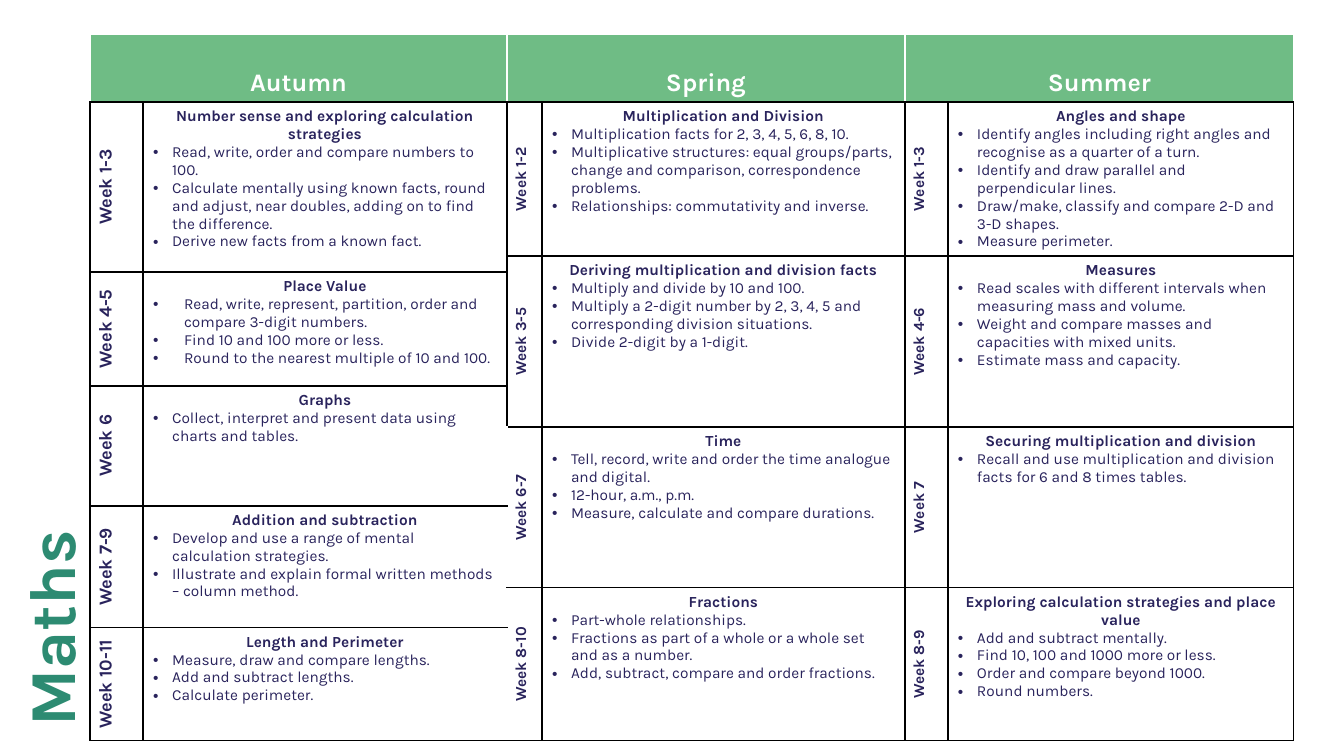
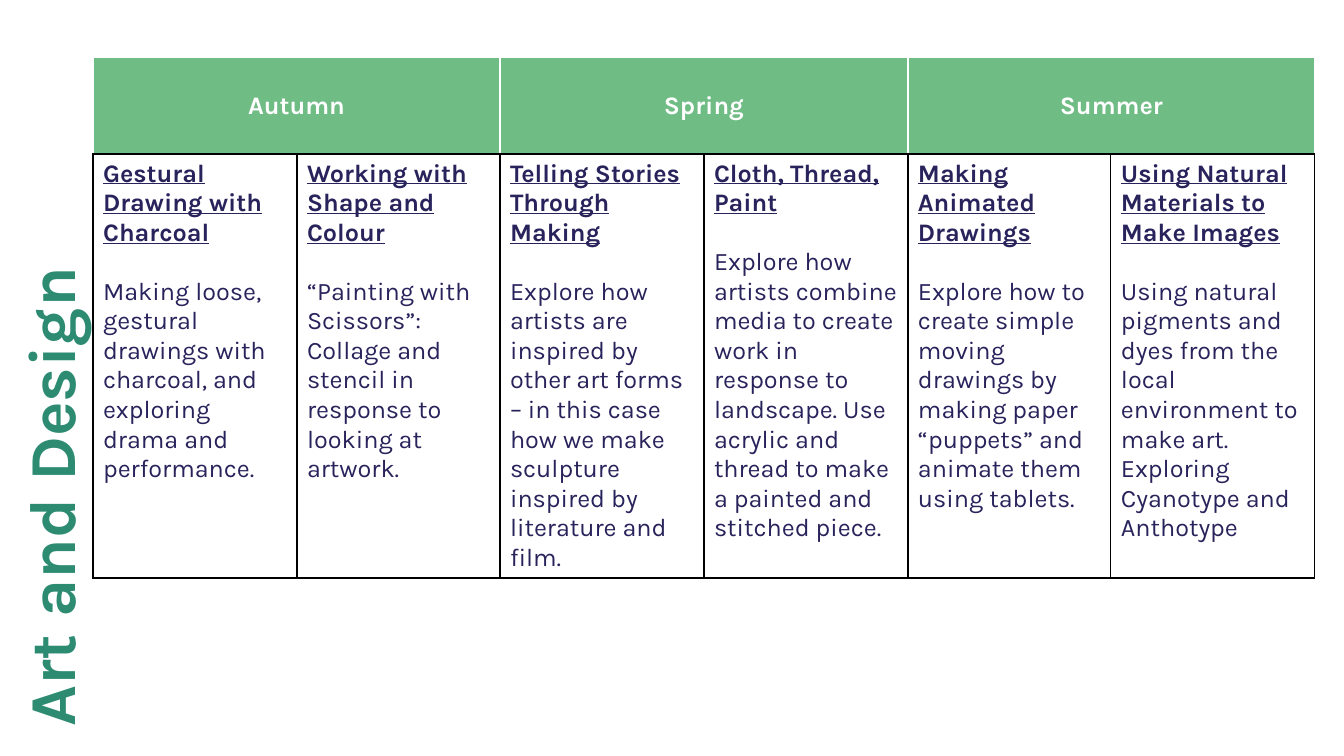
"""Build two curriculum overview slides: Maths and Art and Design."""
from dataclasses import dataclass

from lxml.etree import SubElement, Element
from pptx import Presentation
from pptx.dml.color import RGBColor
from pptx.enum.text import MSO_ANCHOR as ANCHOR, MSO_AUTO_SIZE as AUTO, PP_ALIGN as ALIGN
from pptx.oxml.ns import qn
from pptx.util import Emu, Pt

PX = 914400 / 100.8
FONT = "Karla"
GREEN, TEAL, NAVY = "6FBC85", "2D8B72", "29235C"
WHITE, BLACK = "FFFFFF", "000000"
TERMS = ("Autumn", "Spring", "Summer")
HEADER = {"size": Pt(18), "bold": True}


@dataclass(frozen=True)
class Para:
    """One paragraph with its format."""
    text: str
    fmt: dict
    color: str = NAVY
    align: ALIGN = ALIGN.LEFT
    indent: int = 0
    before: int = 0


@dataclass(frozen=True)
class Unit:
    """A block of weeks with a topic and its points."""
    row: int
    rows: int
    weeks: str
    topic: str
    points: tuple[str, ...]
    indent: int = 19
    left: str = BLACK


@dataclass(frozen=True)
class Project:
    """An art project and its summary."""
    title: str
    summary: str


MATHS = (
    (
        Unit(1, 2, "1-3", "Number sense and exploring calculation strategies", (
            "Read, write, order and compare numbers to 100.",
            "Calculate mentally using known facts, round and adjust, near doubles, "
            "adding on to find the difference.",
            "Derive new facts from a known fact.")),
        Unit(3, 1, "4-5", "Place Value", (
            "Read, write, represent, partition, order and compare 3-digit numbers.",
            "Find 10 and 100 more or less.",
            "Round to the nearest multiple of 10 and 100."), indent=31),
        Unit(4, 2, "6", "Graphs", (
            "Collect, interpret and present data using charts and tables.",)),
        Unit(6, 2, "7-9", "Addition and subtraction", (
            "Develop and use a range of mental calculation strategies.",
            "Illustrate and explain formal written methods – column method.")),
        Unit(8, 1, "10-11", "Length and Perimeter", (
            "Measure, draw and compare lengths.",
            "Add and subtract lengths.",
            "Calculate perimeter.")),
    ),
    (
        Unit(1, 1, "1-2", "Multiplication and Division", (
            "Multiplication facts for 2, 3, 4, 5, 6, 8, 10.",
            "Multiplicative structures: equal groups/parts, change and comparison, "
            "correspondence problems.",
            "Relationships: commutativity and inverse.")),
        Unit(2, 3, "3-5", "Deriving multiplication and division facts", (
            "Multiply and divide by 10 and 100.",
            "Multiply a 2-digit number by 2, 3, 4, 5 and corresponding division situations.",
            "Divide 2-digit by a 1-digit.")),
        Unit(5, 2, "6-7", "Time", (
            "Tell, record, write and order the time analogue and digital.",
            "12-hour, a.m., p.m.",
            "Measure, calculate and compare durations."), left=WHITE),
        Unit(7, 2, "8-10", "Fractions", (
            "Part-whole relationships.",
            "Fractions as part of a whole or a whole set and as a number.",
            "Add, subtract, compare and order fractions."), left=WHITE),
    ),
    (
        Unit(1, 1, "1-3", "Angles and shape", (
            "Identify angles including right angles and recognise as a quarter of a turn.",
            "Identify and draw parallel and perpendicular lines.",
            "Draw/make, classify and compare 2-D and 3-D shapes.",
            "Measure perimeter.")),
        Unit(2, 3, "4-6", "Measures", (
            "Read scales with different intervals when measuring mass and volume.",
            "Weight and compare masses and capacities with mixed units.",
            "Estimate mass and capacity.")),
        Unit(5, 2, "7", "Securing multiplication and division", (
            "Recall and use multiplication and division facts for 6 and 8 times tables.",)),
        Unit(7, 2, "8-9", "Exploring calculation strategies and place value", (
            "Add and subtract mentally.",
            "Find 10, 100 and 1000 more or less.",
            "Order and compare beyond 1000.",
            "Round numbers.")),
    ),
)
WEEK_SIZES = (13, 11, 11)

ART = (
    Project("Gestural Drawing with Charcoal",
            "Making loose, gestural drawings with charcoal, and exploring drama and performance."),
    Project("Working with Shape and Colour",
            "“Painting with Scissors”: Collage and stencil in response to looking at artwork."),
    Project("Telling Stories Through Making",
            "Explore how artists are inspired by other art forms – in this case how we make "
            "sculpture inspired by literature and film."),
    Project("Cloth, Thread, Paint",
            "Explore how artists combine media to create work in response to landscape. "
            "Use acrylic and thread to make a painted and stitched piece."),
    Project("Making Animated Drawings",
            "Explore how to create simple moving drawings by making paper “puppets” "
            "and animate them using tablets."),
    Project("Using Natural Materials to Make Images",
            "Using natural pigments and dyes from the local environment to make art. "
            "Exploring Cyanotype and Anthotype"),
)


def px(n: float) -> Emu:
    """Turn pixels into EMU."""
    return Emu(round(n * PX))


def rgb(value: str) -> RGBColor:
    """Turn a hex string into a colour."""
    return RGBColor.from_string(value)


def assign(obj, values: dict) -> None:
    """Set attributes from a dict."""
    for name, value in values.items():
        setattr(obj, name, value)


def write(tf, paras: list[Para]) -> None:
    """Fill a text frame with formatted paragraphs."""
    for i, para in enumerate(paras):
        p = tf.add_paragraph() if i else tf.paragraphs[0]
        assign(p, {"alignment": para.align, "space_before": Pt(para.before)})
        r = p.add_run()
        r.text = para.text
        assign(r.font, {"name": FONT, **para.fmt})
        r.font.color.rgb = rgb(para.color)
        if para.indent:
            pPr = p._p.get_or_add_pPr()
            pPr.set("marL", str(px(para.indent)))
            pPr.set("indent", str(-px(para.indent)))
            SubElement(pPr, qn("a:buFont")).set("typeface", "Arial")
            SubElement(pPr, qn("a:buChar")).set("char", "•")


def style_cell(cell, fill: str, left: str = BLACK, right: str = BLACK, top: str = BLACK) -> None:
    """Set the fill and the four borders of a cell."""
    cell.fill.solid()
    cell.fill.fore_color.rgb = rgb(fill)
    tcPr = cell._tc.get_or_add_tcPr()
    for i, (side, color) in enumerate(zip("LRTB", (left, right, top, BLACK))):
        ln = Element(qn(f"a:ln{side}"), w=str(Pt(1)))
        SubElement(SubElement(ln, qn("a:solidFill")), qn("a:srgbClr")).set("val", color)
        tcPr.insert(i, ln)


def add_slide(prs, title: str):
    """Add a slide with its upright title on the left."""
    s = prs.slides.add_slide(prs.slide_layouts[5])
    sp = s.shapes.title
    assign(sp, {"left": px(-199), "top": px(440), "width": px(512), "height": px(82),
                "rotation": 270})
    tf = sp.text_frame
    assign(tf, {"word_wrap": True, "auto_size": AUTO.NONE, "vertical_anchor": ANCHOR.MIDDLE})
    write(tf, [Para(title, {"size": Pt(46.8), "bold": True}, TEAL)])
    tf.paragraphs[0].line_spacing = 0.8
    return s


def add_grid(s, xs: list[int], ys: list[int]):
    """Add a table on the given edges with the three term headers."""
    frame = s.shapes.add_table(len(ys) - 1, len(xs) - 1, px(xs[0]), px(ys[0]),
                               px(xs[-1] - xs[0]), px(ys[-1] - ys[0]))
    table = frame.table
    assign(table, {"first_row": False, "horz_banding": False})
    for col, a, b in zip(table.columns, xs, xs[1:]):
        col.width = px(b - a)
    for row, a, b in zip(table.rows, ys, ys[1:]):
        row.height = px(b - a)
    for i, term in enumerate(TERMS):
        cell = table.cell(0, 2 * i)
        cell.merge(table.cell(0, 2 * i + 1))
        for c in (2 * i, 2 * i + 1):
            style_cell(table.cell(0, c), GREEN, WHITE, WHITE, WHITE)
        assign(cell, {"margin_top": px(34), "margin_bottom": 0})
        write(cell.text_frame, [Para(term, HEADER, WHITE, ALIGN.CENTER)])
    return table


def add_unit(table, unit: Unit, col: int, week_size: int) -> None:
    """Fill the week cell and the topic cell of a unit."""
    last = unit.row + unit.rows - 1
    for c, left in ((col, unit.left), (col + 1, BLACK)):
        if unit.rows > 1:
            table.cell(unit.row, c).merge(table.cell(last, c))
        for r in range(unit.row, last + 1):
            style_cell(table.cell(r, c), WHITE, left)
    week, topic = table.cell(unit.row, col), table.cell(unit.row, col + 1)
    week._tc.get_or_add_tcPr().set("vert", "vert270")
    write(week.text_frame, [Para(f"Week {unit.weeks}", {"size": Pt(week_size), "bold": True},
                                 align=ALIGN.CENTER)])
    points = [Para(text, {"size": Pt(11), "bold": False}, indent=unit.indent)
              for text in unit.points]
    write(topic.text_frame, [Para(unit.topic, {"size": Pt(11), "bold": True},
                                  align=ALIGN.CENTER), *points])


def maths_slide(prs) -> None:
    """Build the Maths slide."""
    table = add_grid(add_slide(prs, "Maths"), [90, 143, 507, 542, 905, 948, 1294],
                     [34, 102, 256, 272, 386, 427, 506, 588, 628, 741])
    for i, (units, size) in enumerate(zip(MATHS, WEEK_SIZES)):
        for unit in units:
            add_unit(table, unit, 2 * i, size)


def art_slide(prs) -> None:
    """Build the Art and Design slide."""
    xs = [93 + round(1222 * i / len(ART)) for i in range(len(ART) + 1)]
    table = add_grid(add_slide(prs, "Art and Design"), xs, [57, 154, 578])
    for c, project in enumerate(ART):
        cell = table.cell(1, c)
        style_cell(cell, WHITE)
        write(cell.text_frame, [Para(project.title, {**HEADER, "underline": True}),
                                Para(project.summary, {"size": Pt(18), "bold": False},
                                     before=21)])


def main() -> None:
    """Build and save the presentation."""
    prs = Presentation()
    assign(prs, {"slide_width": px(1344), "slide_height": px(756)})
    maths_slide(prs)
    art_slide(prs)
    prs.save("out.pptx")


if __name__ == "__main__":
    main()
